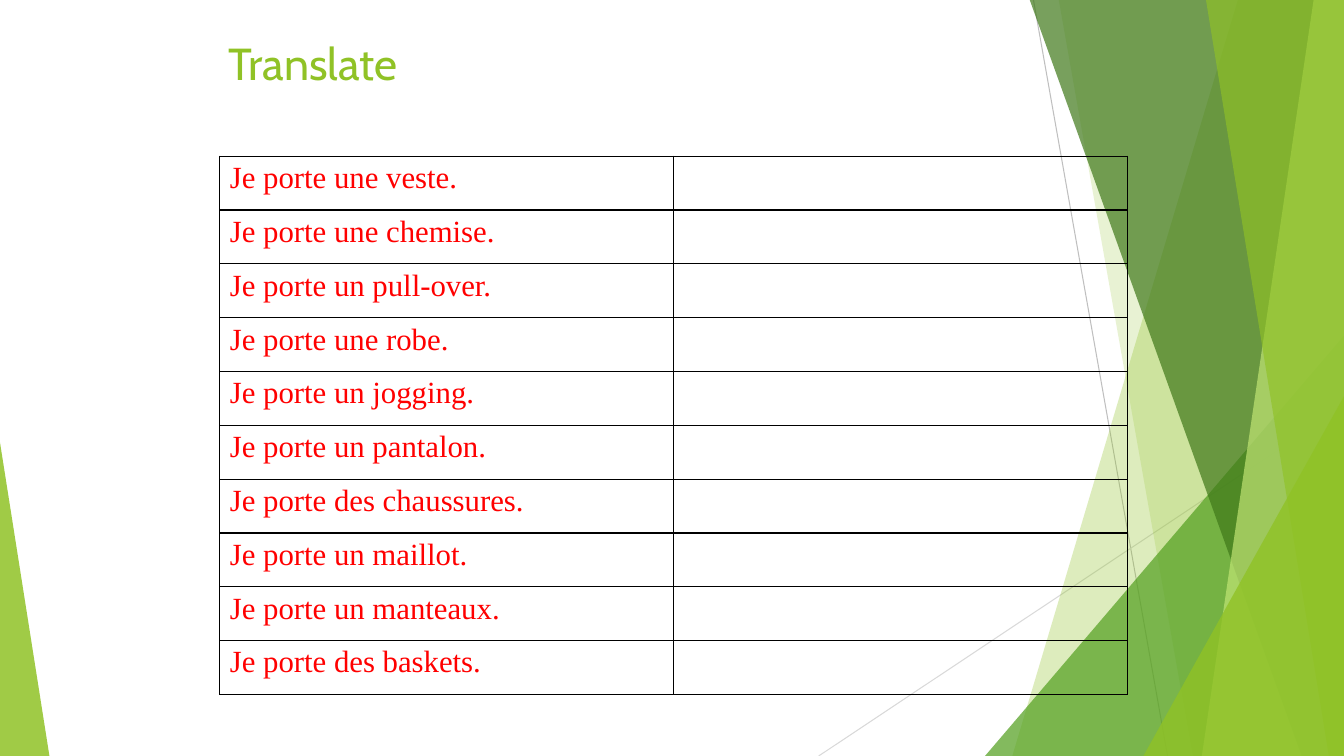
from lxml import etree
from pptx import Presentation
from pptx.dml.color import RGBColor
from pptx.enum.shapes import MSO_CONNECTOR, MSO_SHAPE
from pptx.enum.text import MSO_ANCHOR
from pptx.oxml.ns import qn
from pptx.util import Inches, Pt

STRAIGHT = MSO_CONNECTOR.STRAIGHT
TRIANGLE = MSO_SHAPE.ISOSCELES_TRIANGLE
TOP = MSO_ANCHOR.TOP

# Content
TITLE = "Translate"
SENTENCES = [
    "Je porte une veste.",
    "Je porte une chemise.",
    "Je porte un pull-over.",
    "Je porte une robe.",
    "Je porte un jogging.",
    "Je porte un pantalon.",
    "Je porte des chaussures.",
    "Je porte un maillot.",
    "Je porte un manteaux.",
    "Je porte des baskets.",
]

# Page and table grid, in inches
WIDTH, HEIGHT = 13.33, 7.5
BLEED = -0.01
TABLE_LEFT, TABLE_TOP = 2.18, 1.55
TABLE_WIDTH, TABLE_HEIGHT = 9, 5.34
COLUMNS = 2
GREEN = "90C226"

# Decoration: hairlines as (start, end, colour)
HAIRLINES = [
    ((10.25, 0), (11.58, HEIGHT), "BFBFBF"),
    ((WIDTH, 4.03), (8.12, HEIGHT), "D9D9D9"),
]
# Bands reach the right edge: ("band", top left x, bottom left x, colour, opacity)
# Wedges stand on the bottom edge: ("wedge", left, width, height, apex, colour, opacity)
FACETS = [
    ("band", 12.28, 10.04, GREEN, 30),
    ("band", 10.5, 11.83, GREEN, 20),
    ("wedge", 9.77, 3.56, 4.17, 1, "54A021", 72),
    ("band", 10.21, 12.91, "3F7819", 70),
    ("band", 13.03, 11.92, "C0E474", 70),
    ("band", 11.96, 13.18, GREEN, 65),
    ("wedge", 11.34, 1.99, 3.57, 1, GREEN, 80),
    ("wedge", 0, 0.49, 3.11, 0, GREEN, 85),
]


def color(value):
    return RGBColor.from_string(value)


def write(frame, text, *, size, font, fill, hanging=0):
    para = frame.paragraphs[0]
    if hanging:
        properties = para._p.get_or_add_pPr()
        properties.set("marL", str(Inches(hanging)))
        properties.set("indent", str(-Inches(hanging)))
    span = para.add_run()
    span.text = text
    span.font.size = Pt(size)
    span.font.name = font
    span.font.color.rgb = color(fill)


def add_hairline(page, start, end, fill):
    line = page.shapes.add_connector(STRAIGHT, *map(Inches, start + end))
    line.line.color.rgb = color(fill)
    line.line.width = Pt(0.75)
    etree.SubElement(line._element.spPr, qn("a:effectLst"))


def add_band(page, top_x, bottom_x):
    corners = [(top_x, BLEED), (WIDTH, BLEED), (WIDTH, HEIGHT), (bottom_x, HEIGHT)]
    points = [(Inches(x), Inches(y)) for x, y in corners]
    builder = page.shapes.build_freeform(*points[0])
    builder.add_line_segments(points[1:], close=True)
    return builder.convert_to_shape()


def add_wedge(page, left, width, height, apex):
    box = (left, HEIGHT - height, width, height)
    wedge = page.shapes.add_shape(TRIANGLE, *map(Inches, box))
    wedge.adjustments[0] = apex
    return wedge


def paint(shape, fill, opacity):
    shape.shadow.inherit = False
    shape.line.fill.background()
    shape.fill.solid()
    shape.fill.fore_color.rgb = color(fill)
    tint = shape._element.spPr.find(qn("a:solidFill"))[0]
    etree.SubElement(tint, qn("a:alpha"), val=str(opacity * 1000))


def outline(cell, fill, width):
    properties = cell._tc.get_or_add_tcPr()
    for side in ("lnL", "lnR", "lnT", "lnB"):
        edge = etree.SubElement(properties, qn("a:" + side), w=str(Pt(width)))
        solid = etree.SubElement(edge, qn("a:solidFill"))
        etree.SubElement(solid, qn("a:srgbClr"), val=fill)


def add_title(page):
    box = page.shapes.add_textbox(*map(Inches, (2.17, 0.3, 9, 1.01)))
    box.text_frame.word_wrap = True
    box.text_frame.vertical_anchor = TOP
    write(box.text_frame, TITLE, size=32, font="Cabin", fill=GREEN)


def add_sentences(page):
    area = (TABLE_LEFT, TABLE_TOP, TABLE_WIDTH, TABLE_HEIGHT)
    table = page.shapes.add_table(len(SENTENCES), COLUMNS, *map(Inches, area)).table
    table.first_row = False
    table.horz_banding = False
    for cell in table.iter_cells():
        outline(cell, "000000", 1)
        cell.fill.background()
    for row, sentence in enumerate(SENTENCES):
        write(table.cell(row, 0).text_frame, sentence, size=22,
              font="Times New Roman", fill="FF0000", hanging=0.38)


def main():
    deck = Presentation()
    deck.slide_width, deck.slide_height = Inches(WIDTH), Inches(HEIGHT)
    page = deck.slides.add_slide(deck.slide_layouts[6])

    # Background facets
    for start, end, fill in HAIRLINES:
        add_hairline(page, start, end, fill)
    makers = {"band": add_band, "wedge": add_wedge}
    for kind, *geometry, fill, opacity in FACETS:
        paint(makers[kind](page, *geometry), fill, opacity)

    # Title and exercise
    add_title(page)
    add_sentences(page)
    deck.save("out.pptx")


if __name__ == "__main__":
    main()
